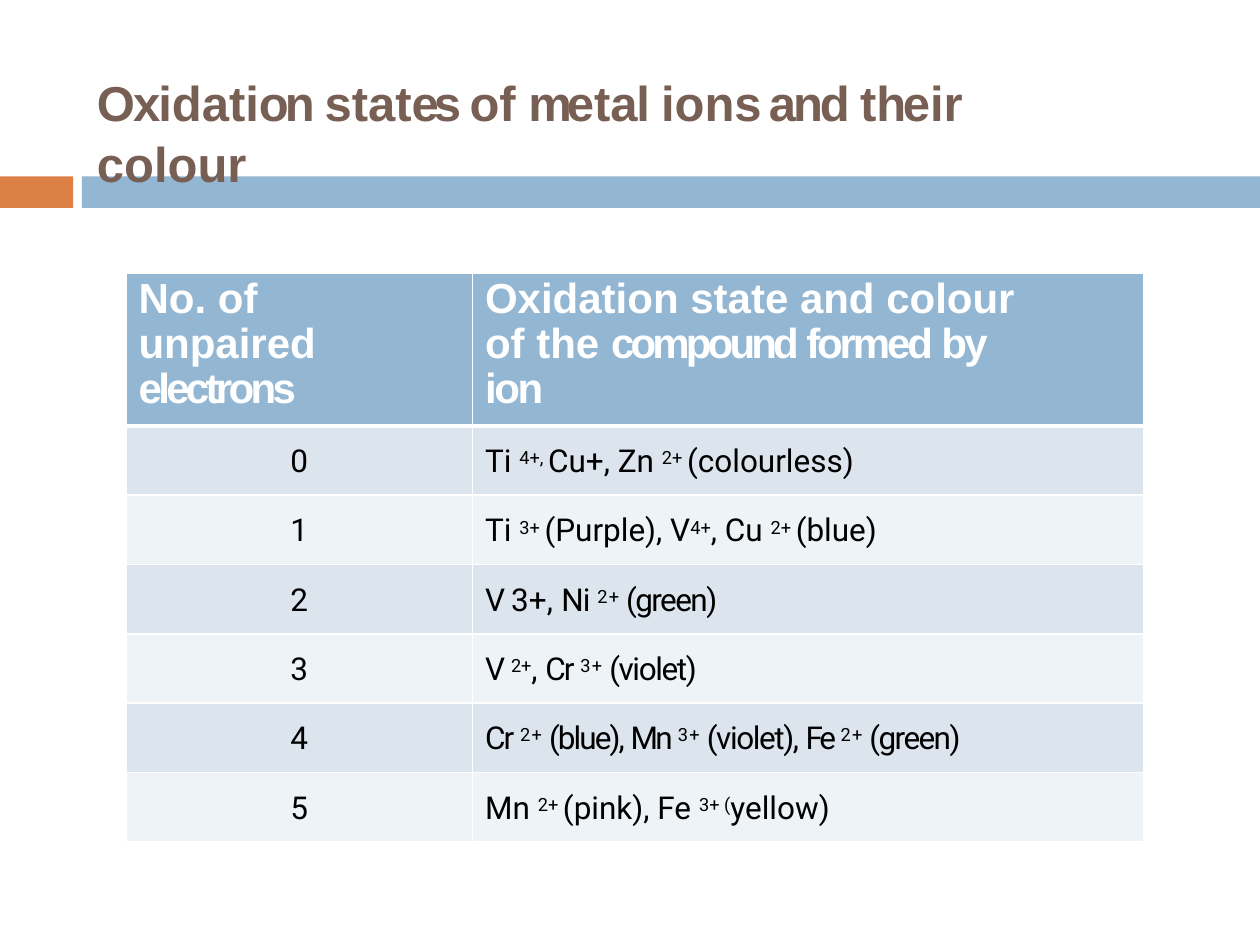
from lxml.etree import SubElement
from pptx import Presentation
from pptx.dml.color import RGBColor
from pptx.enum.shapes import MSO_SHAPE
from pptx.enum.text import PP_ALIGN
from pptx.oxml.ns import qn
from pptx.util import Inches, Pt

BROWN = RGBColor(0x77, 0x5F, 0x54)
ORANGE = RGBColor(0xDD, 0x80, 0x46)
BLUE = RGBColor(0x93, 0xB6, 0xD2)
BAND_DARK = RGBColor(0xDC, 0xE4, 0xED)
BAND_LIGHT = RGBColor(0xEE, 0xF3, 0xF7)
WHITE = RGBColor(0xFF, 0xFF, 0xFF)
BLACK = RGBColor(0, 0, 0)

TITLE_STYLE = {"name": "Arial", "size": Pt(28), "bold": True}
HEADER_STYLE = {"name": "Arial", "size": Pt(24), "bold": True}
BODY_STYLE = {"name": "Roboto", "size": Pt(18), "bold": False}

# Each piece of text is (wording, letter spacing in points).
TITLE = [
    ("Oxi", -1.1), ("dati", 0), ("on ", -2.2), ("stat", 0), ("es ", -2.9),
    ("o", 0), ("f ", -0.6), ("me", -2.8), ("t", 0), ("al i", -0.7),
    ("on", 0), ("s ", -3.6), ("and ", -1.8), ("t", 0), ("he", -1.9),
    ("i", 0), ("r ", -2.1), ("colour", 0),
]
HEADERS = [
    [("No. of unpaired ", 0), ("electrons", -2.1)],
    [("Oxidation state and colour of the ", 0), ("compound ", -2.2),
     ("formed ", -1.8), ("by ", -1.6), ("ion", -1.4)],
]
# A third value marks a superscript.
IONS = [
    [("Ti ", 0), ("4+, ", 0, True), ("Cu+, Zn ", 0), ("2+ ", 0, True),
     ("(colourless)", 0)],
    [("Ti ", 0), ("3+ ", 0, True), ("(Purple), V", 0), ("4+", 0, True),
     (", Cu ", 0), ("2+ ", 0, True), ("(blue)", 0)],
    [("V ", -1.1), ("3+, ", 0.1), ("Ni ", -0.6), ("2+ ", 0.7, True),
     ("(green)", -0.9)],
    [("V ", -1.1), ("2+", -0.1, True), (", ", -0.1), ("Cr ", -1.1),
     ("3+ ", 0.7, True), ("(violet)", -0.8)],
    [("Cr ", -1.1), ("2+ ", 0.7, True), ("(blue), ", -1.1), ("Mn ", -1.6),
     ("3+ ", 0.7, True), ("(violet), ", -0.8), ("Fe ", -1.9),
     ("2+ ", 0.7, True), ("(green)", -0.9)],
    [("Mn ", 0), ("2+ ", 0, True), ("(pink), Fe ", 0), ("3+ (", 0, True),
     ("yellow)", 0)],
]
COLUMN_WIDTHS = [2.75, 5.33]
HEADER_RIGHT_MARGINS = [0.6, 0.9]
HEADER_HEIGHT, ROW_HEIGHT = 1.21, 0.55
BAR_TOP, BAR_HEIGHT = 1.4, 0.25
BARS = [(0, 0.58, ORANGE), (0.65, 9.35, BLUE)]


def write(paragraph, pieces, style, color):
    for wording, spacing, *raised in pieces:
        span = paragraph.add_run()
        span.text = wording
        for name, value in style.items():
            setattr(span.font, name, value)
        span.font.color.rgb = color
        properties = span.font._element
        if spacing:
            properties.set("spc", str(round(spacing * 100)))
        if raised:
            properties.set("baseline", "25000")


def set_margins(target, left, top, right):
    margins = {"left": left, "top": top, "right": right, "bottom": 0}
    for side, value in margins.items():
        setattr(target, f"margin_{side}", Inches(value))


def add_borders(cell, top, bottom):
    properties = cell._tc.get_or_add_tcPr()
    for side, width in {"L": 1, "R": 1, "T": top, "B": bottom}.items():
        line = SubElement(properties, qn(f"a:ln{side}"), w=str(Pt(width)))
        fill = SubElement(line, qn("a:solidFill"))
        SubElement(fill, qn("a:srgbClr"), val=str(WHITE))


def add_bars(page):
    for left, width, color in BARS:
        bar = page.shapes.add_shape(
            MSO_SHAPE.RECTANGLE, Inches(left), Inches(BAR_TOP),
            Inches(width), Inches(BAR_HEIGHT))
        bar.shadow.inherit = False
        bar.fill.solid()
        bar.fill.fore_color.rgb = color
        bar.line.fill.background()


def add_title(page):
    box = page.shapes.add_textbox(
        Inches(0.76), Inches(0.52), Inches(7.59), Inches(0.5))
    frame = box.text_frame
    frame.word_wrap = True
    set_margins(frame, 0.01, 0.03, 0)
    paragraph = frame.paragraphs[0]
    paragraph.line_spacing = 1.05
    write(paragraph, TITLE, TITLE_STYLE, BROWN)


def add_ion_table(page):
    rows = [HEADERS] + [[[(str(count), 0)], ions]
                        for count, ions in enumerate(IONS)]
    heights = [HEADER_HEIGHT] + [ROW_HEIGHT] * len(IONS)
    table = page.shapes.add_table(
        len(rows), len(COLUMN_WIDTHS), Inches(1), Inches(2.17),
        Inches(sum(COLUMN_WIDTHS)), Inches(sum(heights))).table
    for column, width in zip(table.columns, COLUMN_WIDTHS):
        column.width = Inches(width)
    for number, (row, height) in enumerate(zip(rows, heights)):
        table.rows[number].height = Inches(height)
        header = number == 0
        band = BAND_DARK if number % 2 else BAND_LIGHT
        for place, pieces in enumerate(row):
            cell = table.cell(number, place)
            add_borders(cell, 3 if number == 1 else 1, 3 if header else 1)
            cell.fill.solid()
            cell.fill.fore_color.rgb = BLUE if header else band
            paragraph = cell.text_frame.paragraphs[0]
            if header:
                set_margins(cell, 0.1, 0.03, HEADER_RIGHT_MARGINS[place])
                paragraph.line_spacing = 0.96
                write(paragraph, pieces, HEADER_STYLE, WHITE)
            else:
                set_margins(cell, 0.1 * place, 0.14, 0)
                paragraph.alignment = PP_ALIGN.LEFT if place else PP_ALIGN.CENTER
                write(paragraph, pieces, BODY_STYLE, BLACK)


def main():
    deck = Presentation()
    deck.slide_width, deck.slide_height = Inches(10), Inches(7.5)
    page = deck.slides.add_slide(deck.slide_layouts[6])
    add_bars(page)
    add_title(page)
    add_ion_table(page)
    deck.save("out.pptx")


if __name__ == "__main__":
    main()
